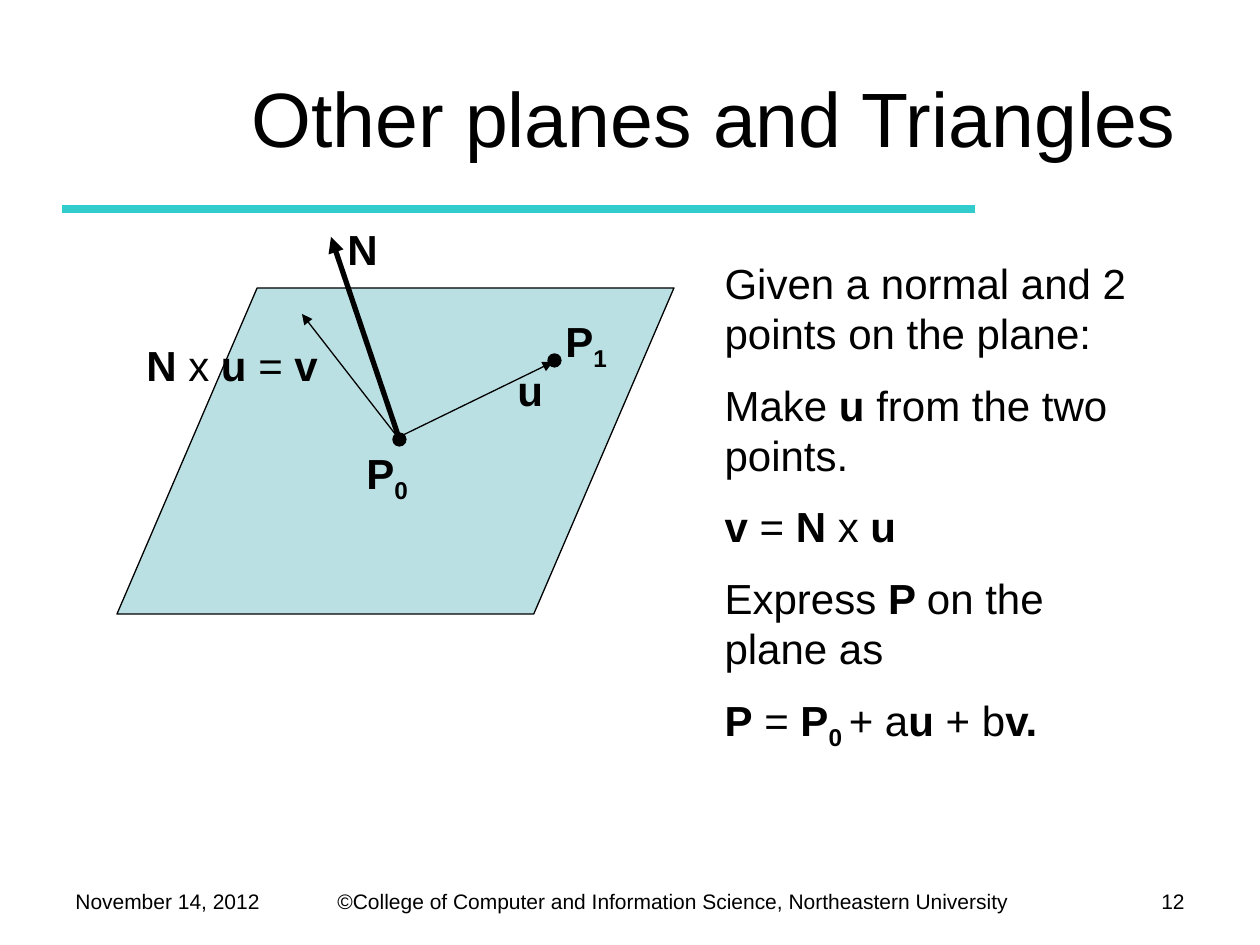
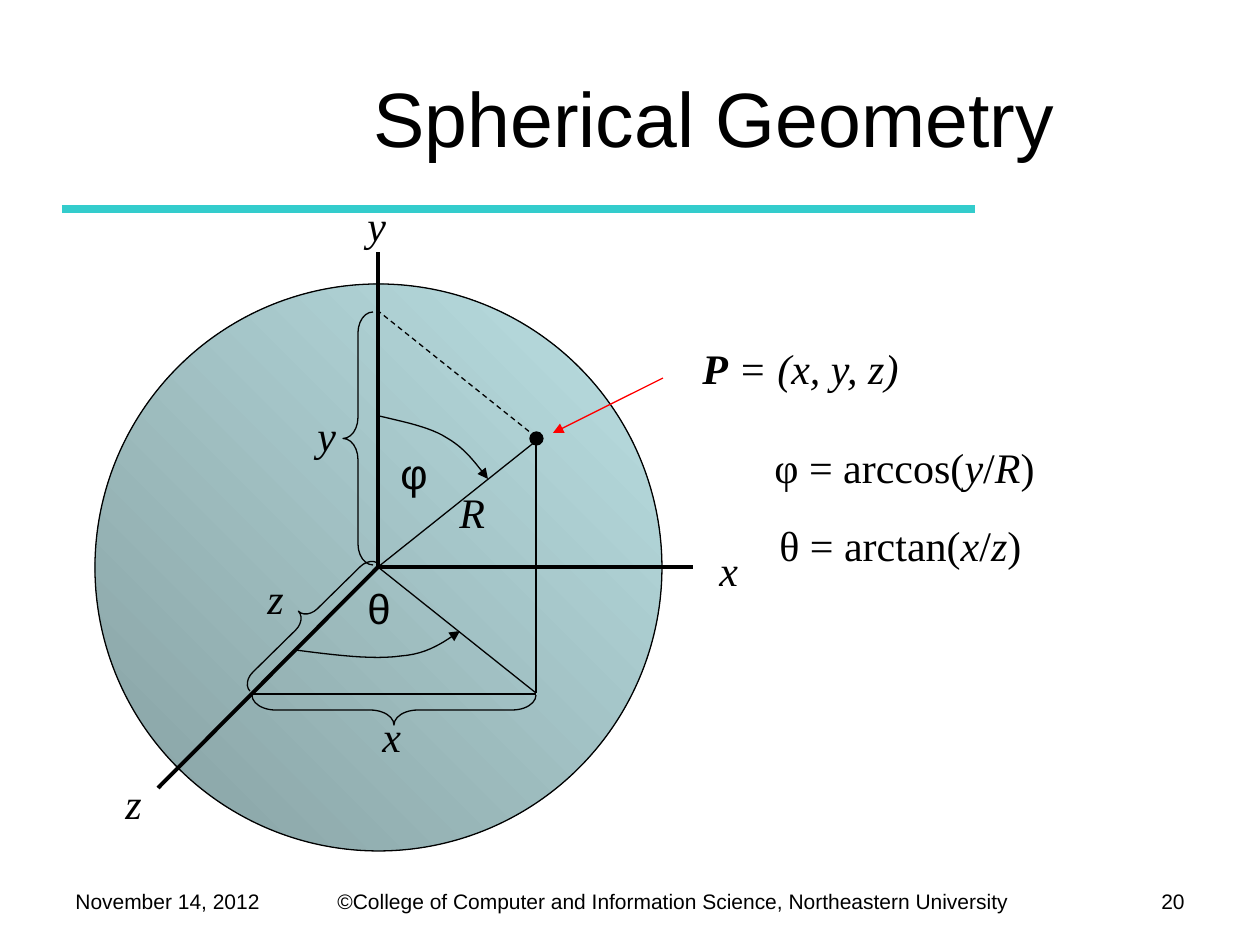
import pptx
import pptx.dml.color
import pptx.enum.dml
import pptx.enum.shapes
import pptx.enum.text
import pptx.oxml
import pptx.util

RGB = pptx.dml.color.RGBColor
SHAPE = pptx.enum.shapes.MSO_SHAPE
ALIGN = pptx.enum.text.PP_ALIGN
Pt = pptx.util.Pt

BLACK = RGB(0x00, 0x00, 0x00)
RED = RGB(0xFF, 0x00, 0x00)
TEAL = RGB(0x33, 0xCC, 0xCC)
PALE = RGB(0xBB, 0xE0, 0xE3)
SHADE = RGB(0x86, 0xA0, 0xA2)

SANS = "Arial"
SERIF = "Times New Roman"
SCALE = 914400 / 126
THIN = 0.75
LABEL_H = 63
DOT = 13


def emu(*lengths):
    return [round(px * SCALE) for px in lengths]


def write(frame, paras, size=24, font=SANS, align=ALIGN.LEFT):
    """Fill a frame; a paragraph is a list of (text, style) with style from b, i, s (subscript)."""
    frame.word_wrap = True
    for idx, parts in enumerate(paras):
        para = frame.add_paragraph() if idx else frame.paragraphs[0]
        para.alignment = align
        para.space_before = Pt(12 if idx else 0)
        for text, style in parts:
            run = para.add_run()
            run.text = text
            run.font.name = font
            run.font.size = Pt(size)
            run.font.color.rgb = BLACK
            run.font.bold = "b" in style
            run.font.italic = "i" in style
            if "s" in style:
                run.font._element.set("baseline", "-25000")


def label(slide, parts, x, y, w, h=LABEL_H, **look):
    box = slide.shapes.add_textbox(*emu(x, y, w, h))
    write(box.text_frame, [parts], **look)


def add_head(line):
    line._get_or_add_ln().append(pptx.oxml.parse_xml(
        '<a:tailEnd xmlns:a="http://schemas.openxmlformats.org/drawingml/2006/main"'
        ' type="triangle"/>'))


def stroke(slide, start, end, width=THIN, color=BLACK, head=False, dash=False):
    link = slide.shapes.add_connector(
        pptx.enum.shapes.MSO_CONNECTOR.STRAIGHT, *emu(*start, *end))
    link._element.spPr.get_or_add_ln()
    link.line.color.rgb = color
    link.line.width = Pt(width)
    if dash:
        link.line.dash_style = pptx.enum.dml.MSO_LINE.DASH
    if head:
        add_head(link.line)
    link._element.spPr.append(pptx.oxml.parse_xml(
        '<a:effectLst xmlns:a="http://schemas.openxmlformats.org/drawingml/2006/main"/>'))


def outline(item):
    item.shadow.inherit = False
    item.line.color.rgb = BLACK
    item.line.width = Pt(THIN)


def shape(slide, kind, x, y, w, h, fill=None, adjust=None, turn=0):
    item = slide.shapes.add_shape(kind, *emu(x, y, w, h))
    outline(item)
    item.rotation = turn
    if adjust is not None:
        item.adjustments[0] = adjust
    if fill is None:
        item.fill.background()
    else:
        item.fill.solid()
        item.fill.fore_color.rgb = fill
    return item


def dot(slide, x, y):
    shape(slide, SHAPE.OVAL, x, y, DOT, DOT, BLACK)


def curve(slide, points, steps=12):
    """Draw an arrow along joined cubic Bezier arcs, given as 3n + 1 points."""
    trail = []
    for first in range(0, len(points) - 1, 3):
        arc = points[first:first + 4]
        for step in range(1, steps + 1):
            t = step / steps
            marks = ((1 - t) ** 3, 3 * t * (1 - t) ** 2, 3 * t * t * (1 - t), t ** 3)
            trail.append(emu(*(sum(m * p[axis] for m, p in zip(marks, arc))
                               for axis in (0, 1))))
    maker = slide.shapes.build_freeform(*emu(*points[0]))
    maker.add_line_segments(trail, close=False)
    path = maker.convert_to_shape()
    outline(path)
    path.fill.background()
    add_head(path.line)


def place(holder, x, y, w, h):
    holder.left, holder.top, holder.width, holder.height = emu(x, y, w, h)


def start(deck, layout, title, number):
    """Add a slide with the title, rule and footer that all slides share."""
    slide = deck.slides.add_slide(deck.slide_layouts[layout])
    head = slide.shapes.title
    place(head, 231, 38, 966, 157)
    head.text_frame.vertical_anchor = pptx.enum.text.MSO_ANCHOR.MIDDLE
    write(head.text_frame, [[(title, "")]], size=44, align=ALIGN.CENTER)
    stroke(slide, (62, 209), (975, 209), 4.5, TEAL)
    label(slide, [("©College of Computer and Information Science, Northeastern University", "")],
          325, 882, 713, 38, size=12)
    label(slide, [("November 14, 2012", "")], 63, 882, 221, 42, size=12)
    label(slide, [(number, "")], 1092, 882, 105, 44, size=12, align=ALIGN.RIGHT)
    return slide


def steps_list(slide):
    body = slide.placeholders[1]
    place(body, 712, 251, 440, 591)
    frame = body.text_frame
    frame.auto_size = pptx.enum.text.MSO_AUTO_SIZE.NONE
    write(frame, [
        [("Given a normal and 2 points on the plane:", "")],
        [("Make ", ""), ("u ", "b"), ("from the two points.", "")],
        [("v ", "b"), ("=", ""), (" N ", "b"), ("x", ""), (" u", "b")],
        [("Express ", ""), ("P ", "b"), ("on the plane as", "")],
        [("P", "b"), (" = ", ""), ("P", "b"), ("0 ", "bs"), ("+ a", ""),
         ("u ", "b"), ("+ b", ""), ("v.", "b")],
    ])
    for para in frame.paragraphs:
        props = para._p.get_or_add_pPr()
        props.set("marL", "0")
        props.set("indent", "0")
        props.append(pptx.oxml.parse_xml(
            '<a:buNone xmlns:a="http://schemas.openxmlformats.org/drawingml/2006/main"/>'))


def plane_slide(deck):
    slide = start(deck, 1, "Other planes and Triangles", "12")
    shape(slide, SHAPE.PARALLELOGRAM, 117, 288, 557, 326, PALE, 0.43)
    stroke(slide, (399, 438), (331, 237), 3, head=True)
    dot(slide, 393, 433)
    dot(slide, 548, 354)
    stroke(slide, (397, 438), (553, 362), head=True)
    stroke(slide, (396, 435), (302, 314), head=True)
    label(slide, [("N", "b")], 335, 217, 68)
    label(slide, [("u", "b")], 505, 358, 73)
    label(slide, [("N ", "b"), ("x", ""), (" u ", "b"), ("=", ""), (" v", "b")], 134, 333, 224)
    label(slide, [("P", "b"), ("0", "bs")], 354, 441, 84)
    label(slide, [("P", "b"), ("1", "bs")], 553, 309, 88)
    steps_list(slide)


def sphere_slide(deck):
    slide = start(deck, 5, "Spherical Geometry", "20")
    ball = shape(slide, SHAPE.OVAL, 95, 284, 567, 567)
    ball.fill.gradient()
    ball.fill.gradient_angle = 45
    for stop, color in zip(ball.fill.gradient_stops, (SHADE, PALE)):
        stop.color.rgb = color

    centre, point, foot = (378, 567), (536, 441), (536, 693)
    for tip in ((378, 252), (693, 567), (158, 788)):
        stroke(slide, centre, tip, 2.25)
    for ends in ((point, foot), (point, centre), (centre, foot), ((251, 694), (536, 694))):
        stroke(slide, *ends)
    stroke(slide, (536, 437), (377, 310), dash=True)
    dot(slide, 530, 432)
    stroke(slide, (663, 378), (553, 433), color=RED, head=True)

    curve(slide, [(379, 416), (404, 422), (430, 427), (447, 438),
                  (466, 449), (476, 464), (488, 479)])
    curve(slide, [(295, 650), (334, 655), (373, 660), (401, 656),
                  (428, 654), (444, 642), (460, 631)])
    for x, y, w, h, bend, turn in ((343, 312, 30, 253, 0.7, 0),
                                   (295, 529, 23, 181, 0.66, 45.5),
                                   (379, 568, 30, 284, 0.79, 270)):
        shape(slide, SHAPE.LEFT_BRACE, x, y, w, h, adjust=bend, turn=turn)

    for text, x, y in (("φ", 388, 441), ("θ", 355, 576)):
        label(slide, [(text, "")], x, y, 66)
    for text, x, y in (("x", 707, 538), ("z", 113, 771), ("y", 355, 193), ("R", 447, 480),
                       ("y", 305, 403), ("z", 255, 566), ("x", 370, 704)):
        label(slide, [(text, "i")], x, y, 66, font=SERIF)
    label(slide, [("P", "bi"), (" = (x, y, z)", "i")], 690, 336, 290, font=SERIF)
    for func, top, base, x, y in (("φ = arccos(", "y", "R", 762, 435),
                                  ("θ = arctan(", "x", "z", 767, 513)):
        label(slide, [(func, ""), (top, "i"), ("/", ""), (base, "i"), (")", "")],
              x, y, 428, font=SERIF)


def main():
    deck = pptx.Presentation()
    deck.slide_width, deck.slide_height = emu(1260, 945)
    plane_slide(deck)
    sphere_slide(deck)
    deck.save("out.pptx")


if __name__ == "__main__":
    main()
